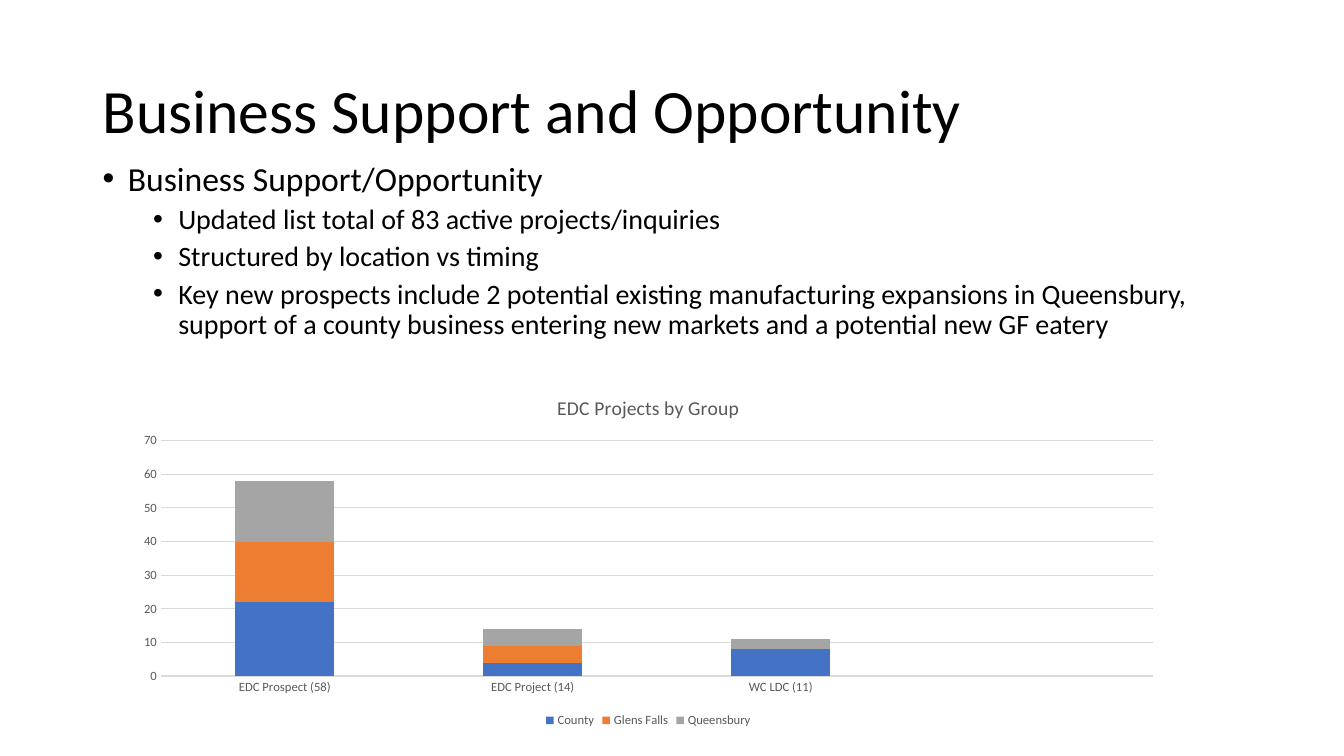
from lxml import etree
from pptx import Presentation
from pptx.chart.data import CategoryChartData
from pptx.dml.color import RGBColor
from pptx.enum.chart import XL_CHART_TYPE, XL_LEGEND_POSITION, XL_TICK_MARK
from pptx.enum.text import MSO_ANCHOR
from pptx.oxml.ns import qn
from pptx.util import Inches, Pt

STACKED = XL_CHART_TYPE.COLUMN_STACKED
LEGEND_BOTTOM = XL_LEGEND_POSITION.BOTTOM
NO_TICK = XL_TICK_MARK.NONE
MIDDLE = MSO_ANCHOR.MIDDLE
TOP = MSO_ANCHOR.TOP

FONT = "Calibri"
COLORS = {
    "text": "000000",
    "label": "595959",
    "grid": "D9D9D9",
    "County": "4472C4",
    "Glens Falls": "ED7D31",
    "Queensbury": "A5A5A5",
}
LEVELS = [
    {"size": 24, "space": 10, "indent": 0.25},
    {"size": 20, "space": 5, "indent": 0.75},
]
BULLETS = [
    (0, "Business Support/Opportunity"),
    (1, "Updated list total of 83 active projects/inquiries"),
    (1, "Structured by location vs timing"),
    (1, "Key new prospects include 2 potential existing manufacturing expansions in "
        "Queensbury, support of a county business entering new markets and a potential "
        "new GF eatery"),
]
CATEGORIES = ["EDC Prospect (58)", "EDC Project (14)", "WC LDC (11)", ""]
SERIES = {
    "County": [22, 4, 8, None],
    "Glens Falls": [18, 5, None, None],
    "Queensbury": [18, 5, 3, None],
}


def set_attributes(target, values):
    for name, value in values.items():
        setattr(target, name, value)


def color(name):
    return RGBColor.from_string(COLORS[name])


def style_font(font, size, color_name):
    set_attributes(font, {"name": FONT, "size": Pt(size), "bold": False})
    font.color.rgb = color(color_name)


def style_line(line):
    line.color.rgb = color("grid")
    line.width = Pt(0.75)


def add_text_frame(slide, box, anchor):
    frame = slide.shapes.add_textbox(*map(Inches, box)).text_frame
    set_attributes(frame, {"word_wrap": True, "vertical_anchor": anchor})
    return frame


def add_title(slide, box):
    paragraph = add_text_frame(slide, box, MIDDLE).paragraphs[0]
    paragraph.text = "Business Support and Opportunity"
    paragraph.line_spacing = 0.9
    style_font(paragraph.runs[0].font, 44, "text")


def add_bullets(slide, box):
    frame = add_text_frame(slide, box, TOP)
    for index, (level, text) in enumerate(BULLETS):
        paragraph = frame.add_paragraph() if index else frame.paragraphs[0]
        style = LEVELS[level]
        set_attributes(paragraph, {
            "text": text,
            "level": level,
            "line_spacing": 0.9,
            "space_before": Pt(style["space"]),
        })
        style_font(paragraph.runs[0].font, style["size"], "text")
        properties = paragraph._p.get_or_add_pPr()
        properties.set("marL", str(Inches(style["indent"])))
        properties.set("indent", str(Inches(-0.25)))
        etree.SubElement(properties, qn("a:buFont")).set("typeface", "Arial")
        etree.SubElement(properties, qn("a:buChar")).set("char", "•")


def add_projects_chart(slide, box):
    data = CategoryChartData()
    data.categories = CATEGORIES
    for name, values in SERIES.items():
        data.add_series(name, values)
    chart = slide.shapes.add_chart(STACKED, *map(Inches, box), data).chart
    style_font(chart.font, 10, "text")

    title = chart.chart_title.text_frame.paragraphs[0]
    title.text = "EDC Projects by Group"
    style_font(title.runs[0].font, 14, "label")

    plot = chart.plots[0]
    set_attributes(plot, {"gap_width": 150, "overlap": 100, "vary_by_categories": False})
    for series in plot.series:
        series.format.fill.solid()
        series.format.fill.fore_color.rgb = color(series.name)

    for axis in (chart.category_axis, chart.value_axis):
        set_attributes(axis, {"major_tick_mark": NO_TICK, "minor_tick_mark": NO_TICK})
        style_font(axis.tick_labels.font, 9, "label")
    style_line(chart.category_axis.format.line)
    chart.value_axis.format.line.fill.background()
    set_attributes(chart.value_axis, {
        "minimum_scale": 0, "maximum_scale": 70, "major_unit": 10,
    })
    style_line(chart.value_axis.major_gridlines.format.line)

    chart.has_legend = True
    set_attributes(chart.legend, {"position": LEGEND_BOTTOM, "include_in_layout": False})
    style_font(chart.legend.font, 9, "label")


def main():
    presentation = Presentation()
    set_attributes(presentation, {
        "slide_width": Inches(13.33), "slide_height": Inches(7.5),
    })
    slide = presentation.slides.add_slide(presentation.slide_layouts[6])
    add_title(slide, (0.92, 0.4, 11.5, 1.45))
    add_bullets(slide, (0.92, 1.56, 11.5, 4.76))
    add_projects_chart(slide, (1.22, 3.75, 10.42, 3.51))
    presentation.save("out.pptx")


if __name__ == "__main__":
    main()
